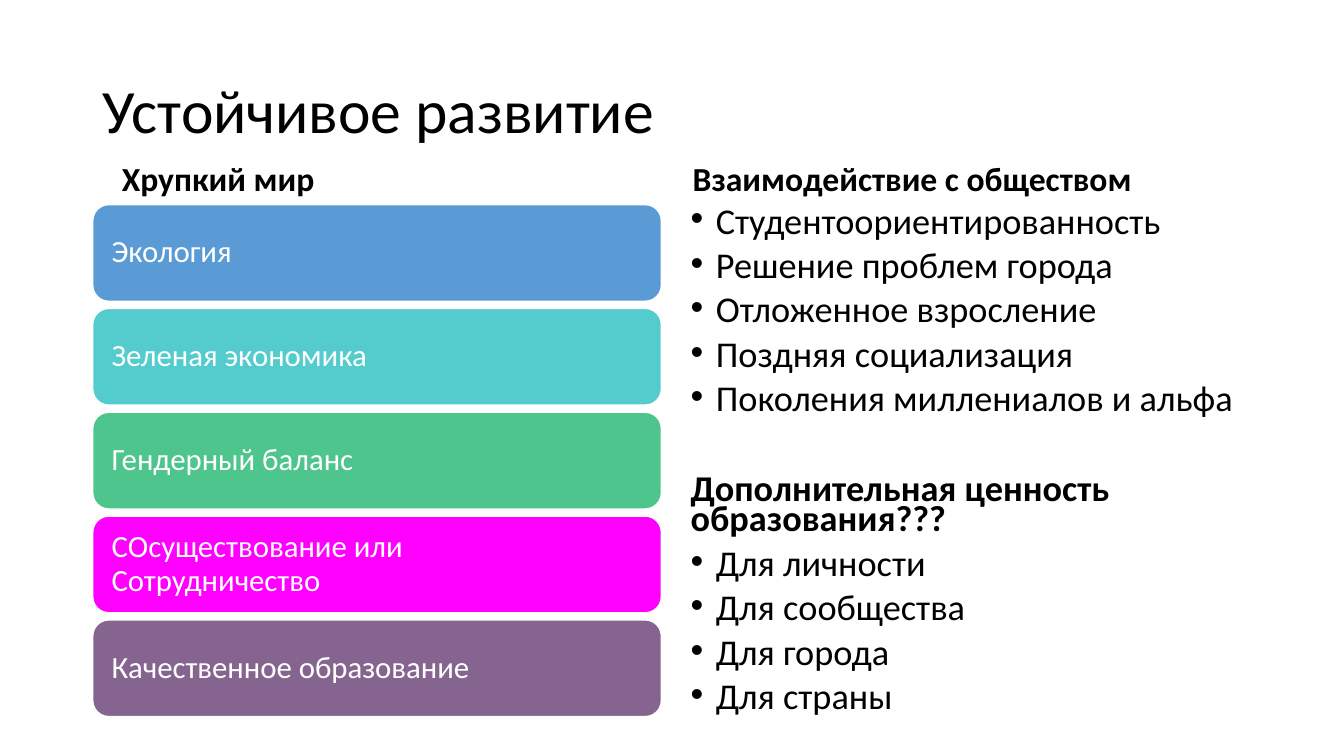
from dataclasses import dataclass

from lxml.etree import SubElement
from pptx import Presentation
from pptx.dml.color import RGBColor
from pptx.enum.shapes import MSO_SHAPE
from pptx.enum.text import MSO_ANCHOR, MSO_AUTO_SIZE, PP_ALIGN
from pptx.oxml.ns import qn
from pptx.util import Emu, Pt

SCALE = 9144  # EMU per px, 100 px to the inch


def px(num):
    return Emu(num * SCALE)


@dataclass(frozen=True)
class Theme:
    font: str = "Calibri"
    ink: str = "000000"
    paper: str = "FFFFFF"
    title: float = 44
    head: float = 24
    card: float = 22
    item: float = 25.9


class Deck:
    def __init__(self, theme, wide, high):
        self.theme = theme
        self.file = Presentation()
        self.file.slide_width, self.file.slide_height = px(wide), px(high)
        self.slide = self.file.slides.add_slide(self.file.slide_layouts[4])
        self.slots = {s.placeholder_format.idx: s for s in self.slide.placeholders}

    def style(self, para, text, size, color, bold=False, lead=0.9, before=0):
        para.text = text
        para.alignment = PP_ALIGN.LEFT
        para.line_spacing = lead
        para.space_before = Pt(before)
        font = para.font
        font.name, font.size, font.bold = self.theme.font, Pt(size), bold
        font.color.rgb = RGBColor.from_string(color)

    def place(self, slot, box, anchor):
        shape = self.slots.pop(slot)
        shape.left, shape.top, shape.width, shape.height = map(px, box)
        frame = shape.text_frame
        frame.word_wrap = True
        frame.auto_size = MSO_AUTO_SIZE.NONE
        frame.vertical_anchor = anchor
        return frame

    def title(self, text, box):
        frame = self.place(0, box, MSO_ANCHOR.MIDDLE)
        self.style(frame.paragraphs[0], text, self.theme.title, self.theme.ink)

    def head(self, slot, text, box):
        frame = self.place(slot, box, MSO_ANCHOR.BOTTOM)
        self.style(frame.paragraphs[0], text, self.theme.head, self.theme.ink,
                   bold=True, before=10)

    def list(self, slot, rows, box):
        """Rows are (text, is_head) pairs."""
        frame = self.place(slot, box, MSO_ANCHOR.TOP)
        for num, (text, is_head) in enumerate(rows):
            para = frame.add_paragraph() if num else frame.paragraphs[0]
            self.style(para, text, self.theme.item, self.theme.ink,
                       bold=is_head, lead=0.7, before=42 if is_head else 10)
            self.mark(para, 0 if is_head else 25)

    def mark(self, para, indent):
        """Set the hanging indent and its bullet; no indent means no bullet."""
        props = para._p.get_or_add_pPr()
        props.set("marL", str(px(indent)))
        props.set("indent", str(-px(indent)))
        if indent:
            bullet = SubElement(props, qn("a:buChar"), char="•")
        else:
            bullet = SubElement(props, qn("a:buNone"))
        props.find(qn("a:defRPr")).addprevious(bullet)

    def card(self, text, fill, box):
        shape = self.slide.shapes.add_shape(MSO_SHAPE.ROUNDED_RECTANGLE, *map(px, box))
        shape.shadow.inherit = False
        shape.fill.solid()
        shape.fill.fore_color.rgb = RGBColor.from_string(fill)
        shape.line.color.rgb = RGBColor.from_string(self.theme.paper)
        shape.line.width = Pt(1)
        frame = shape.text_frame
        frame.word_wrap = True
        frame.vertical_anchor = MSO_ANCHOR.MIDDLE
        frame.margin_left = frame.margin_right = px(14)
        self.style(frame.paragraphs[0], text, self.theme.card, self.theme.paper)

    def save(self):
        for shape in self.slots.values():  # drop unused placeholders
            shape._element.getparent().remove(shape._element)
        self.file.save("out.pptx")


CARDS = [
    ("Экология", "5B9BD5"),
    ("Зеленая экономика", "54CCCD"),
    ("Гендерный баланс", "4DC58D"),
    ("СОсуществование или \nСотрудничество", "FF00FF"),
    ("Качественное образование", "85658F"),
]
ROWS = [
    ("Студентоориентированность", False),
    ("Решение проблем города", False),
    ("Отложенное взросление", False),
    ("Поздняя социализация", False),
    ("Поколения миллениалов и альфа", False),
    ("Дополнительная ценность образования???", True),
    ("Для личности", False),
    ("Для сообщества", False),
    ("Для города", False),
    ("Для страны", False),
]


def main():
    deck = Deck(Theme(), 1333, 750)

    # Title and column heads
    deck.title("Устойчивое развитие", (92, 40, 1150, 145))
    deck.head(1, "Хрупкий мир", (111, 112, 564, 90))
    deck.head(3, "Взаимодействие с обществом", (677, 112, 567, 90))

    # Left column: stack of cards
    top, step = 203, 103
    for num, (text, fill) in enumerate(CARDS):
        deck.card(text, fill, (92, top + num * step, 564, 96))

    # Right column: list
    deck.list(4, ROWS, (675, top, 567, 526))

    deck.save()


if __name__ == "__main__":
    main()
